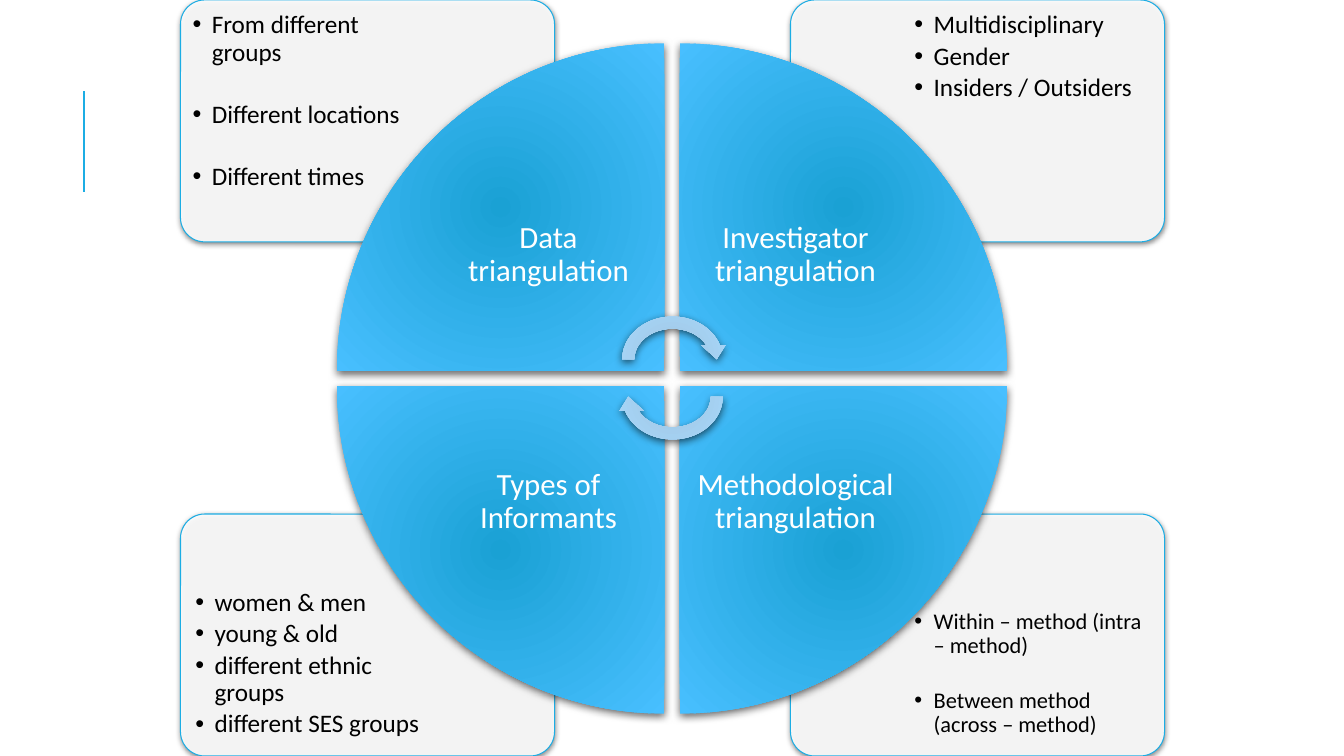
import pptx
import pptx.dml.color
import pptx.enum.shapes
import pptx.enum.text
import pptx.oxml
import pptx.oxml.ns
import pptx.util
import lxml.etree

PX = 9144  # 100 px to the inch
WHITE = pptx.dml.color.RGBColor(0xFF, 0xFF, 0xFF)
BLACK = pptx.dml.color.RGBColor(0x00, 0x00, 0x00)
ACCENT = pptx.dml.color.RGBColor(0x1C, 0xAD, 0xE4)
WEDGE_INNER = pptx.dml.color.RGBColor(0x1A, 0xA1, 0xD4)
WEDGE_OUTER = pptx.dml.color.RGBColor(0x48, 0xBF, 0xFF)
ARROW_INNER = pptx.dml.color.RGBColor(0xA0, 0xC4, 0xDF)
ARROW_OUTER = pptx.dml.color.RGBColor(0xA8, 0xDA, 0xFF)
NS = 'xmlns:a="http://schemas.openxmlformats.org/drawingml/2006/main"'
qn = pptx.oxml.ns.qn
SHAPE = pptx.enum.shapes.MSO_SHAPE

prs = pptx.Presentation()
prs.slide_width, prs.slide_height = 1333 * PX, 750 * PX
slide = prs.slides.add_slide(prs.slide_layouts[6])


def add_shadowed(kind, box, blur, distance, alpha, gradient=None):
    shape = slide.shapes.add_shape(kind, *[n * PX for n in box])
    if gradient:
        inner, outer = gradient
        shape._element.spPr.insert(2, pptx.oxml.parse_xml(
            f'<a:gradFill {NS} rotWithShape="1"><a:gsLst>'
            f'<a:gs pos="0"><a:srgbClr val="{inner}"/></a:gs>'
            f'<a:gs pos="100000"><a:srgbClr val="{outer}"/></a:gs></a:gsLst>'
            '<a:path path="circle"><a:fillToRect l="100000" t="100000" '
            'r="100000" b="100000"/></a:path></a:gradFill>'))
        shape.line.fill.background()
    shape.shadow.inherit = False
    shape._element.spPr.find(qn("a:effectLst")).append(pptx.oxml.parse_xml(
        f'<a:outerShdw {NS} blurRad="{blur * 12700}" dist="{distance * 12700}" '
        'dir="5400000" algn="ctr" rotWithShape="0"><a:srgbClr val="000000">'
        f'<a:alpha val="{alpha * 1000}"/></a:srgbClr></a:outerShdw>'))
    return shape


def add_text(box, inset, lines, size, color):
    frame = slide.shapes.add_textbox(*[n * PX for n in box]).text_frame
    frame.word_wrap = True
    frame.margin_left = frame.margin_right = inset * PX
    frame.margin_top = frame.margin_bottom = inset * PX
    for i, line in enumerate(lines):
        paragraph = frame.paragraphs[0] if i == 0 else frame.add_paragraph()
        paragraph.line_spacing = 0.9
        run = paragraph.add_run()
        run.text = line
        run.font.name = "Calibri"
        run.font.size = pptx.util.Pt(size)
        run.font.color.rgb = color
    return frame


# Accent rule at the left
accent_rule = slide.shapes.add_connector(
    pptx.enum.shapes.MSO_CONNECTOR.STRAIGHT, 83 * PX, 190 * PX, 83 * PX, 90 * PX)
accent_rule.line.color.rgb = ACCENT
accent_rule.line.width = pptx.util.Pt(1.5)
lxml.etree.SubElement(accent_rule._element.spPr, qn("a:effectLst"))

# Corner cards: column, row, text top, inset, size, space after, bullets
cards = [
    (1, 1, 598, 7, 16, 22,
     ["Within – method (intra – method)", "Between method (across – method)"]),
    (0, 1, 575, 10, 18, 3,
     ["women & men", "young & old", "different ethnic groups",
      "different SES groups"]),
    (1, 0, 5, 7, 18, 3, ["Multidisciplinary", "Gender", "Insiders / Outsiders"]),
    (0, 0, 5, 7, 18, 25,
     ["From different groups", "Different locations", "Different times"]),
]
for column, row, top, inset, size, space_after, bullets in cards:
    card = add_shadowed(SHAPE.ROUNDED_RECTANGLE,
                        (179 + 605 * column, 510 * row, 371, 240), 4, 1, 50)
    card.adjustments[0] = 0.1
    card.fill.solid()
    card.fill.fore_color.rgb = WHITE
    fill_color = card._element.spPr.find(qn("a:solidFill"))[0]
    lxml.etree.SubElement(fill_color, qn("a:alpha")).set("val", "90000")
    card.line.color.rgb = ACCENT
    card.line.width = pptx.util.Pt(0.75)

    details = add_text((184 + 716 * column, top, 249, 169), inset, bullets,
                       size, BLACK)
    for paragraph in details.paragraphs:
        paragraph.space_after = pptx.util.Pt(space_after)
        props = paragraph._p.get_or_add_pPr()
        props.set("marL", str(19 * PX))
        props.set("indent", str(-19 * PX))
        lxml.etree.SubElement(props, qn("a:buFont")).set("typeface", "Arial")
        lxml.etree.SubElement(props, qn("a:buChar")).set("char", "•")

# Four wedges of the circle, clockwise from top left
wedges = [(0, 0, "Data triangulation"), (1, 0, "Investigator triangulation"),
          (1, 1, "Methodological triangulation"), (0, 1, "Types of Informants")]
for turn, (column, row, title) in enumerate(wedges):
    left, top = 334 + 340 * column, 43 + 340 * row
    wedge = add_shadowed(SHAPE.PIE_WEDGE, (left, top, 325, 325), 6, 2, 60,
                         (WEDGE_INNER, WEDGE_OUTER))
    wedge.rotation = 90 * turn
    label = add_text((left + 95 * (1 - column), top + 95 * (1 - row), 230, 230),
                     17, [title], 22, WHITE)
    label.vertical_anchor = pptx.enum.text.MSO_ANCHOR.MIDDLE
    label.paragraphs[0].alignment = pptx.enum.text.PP_ALIGN.CENTER

# Cycle arrows in the centre
for top, rotation in [(308, 0), (345, 180)]:
    cycle_arrow = add_shadowed(SHAPE.CIRCULAR_ARROW, (611, top, 112, 97), 6, 2, 60,
                               (ARROW_INNER, ARROW_OUTER))
    cycle_arrow.rotation = rotation

prs.save("out.pptx")
